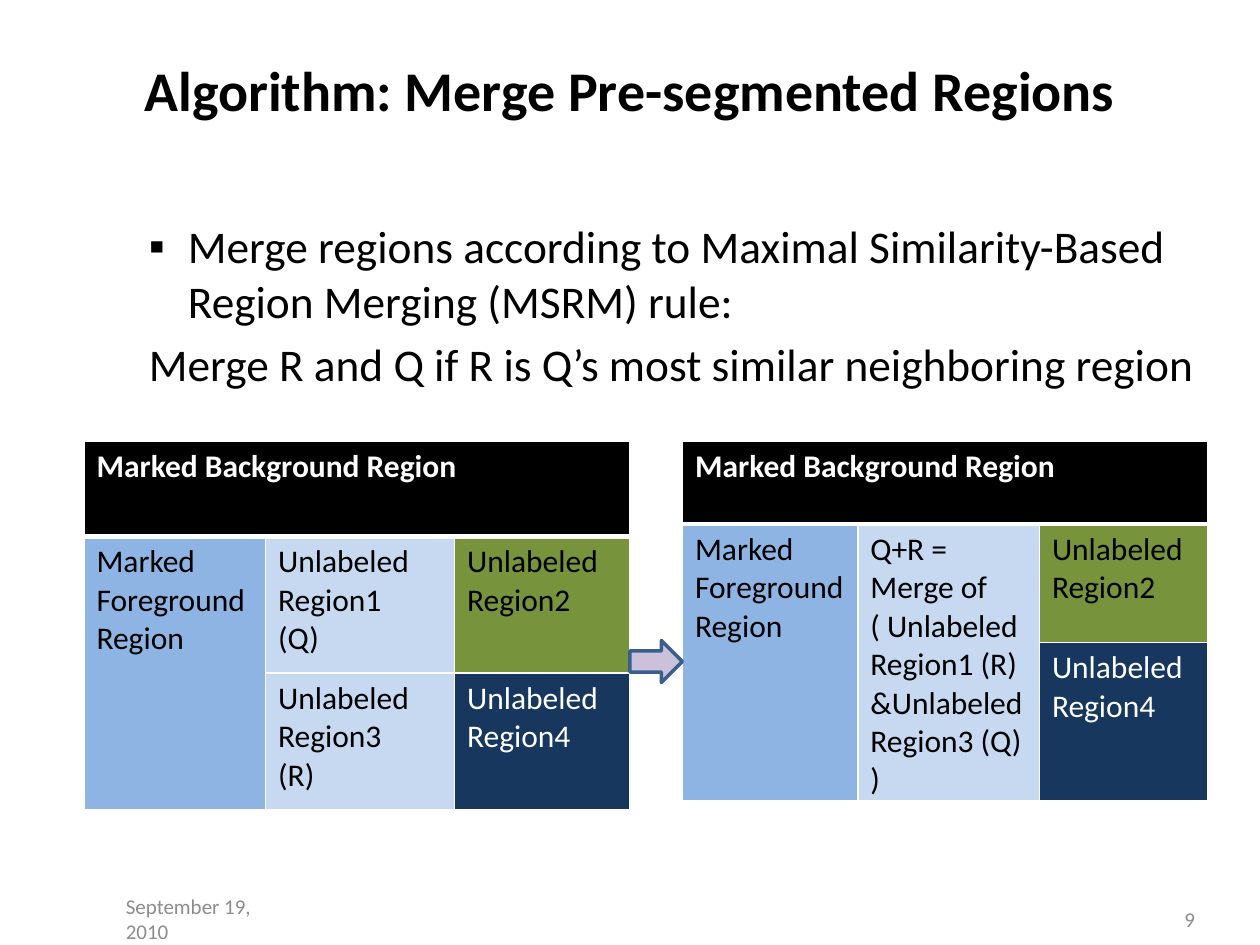
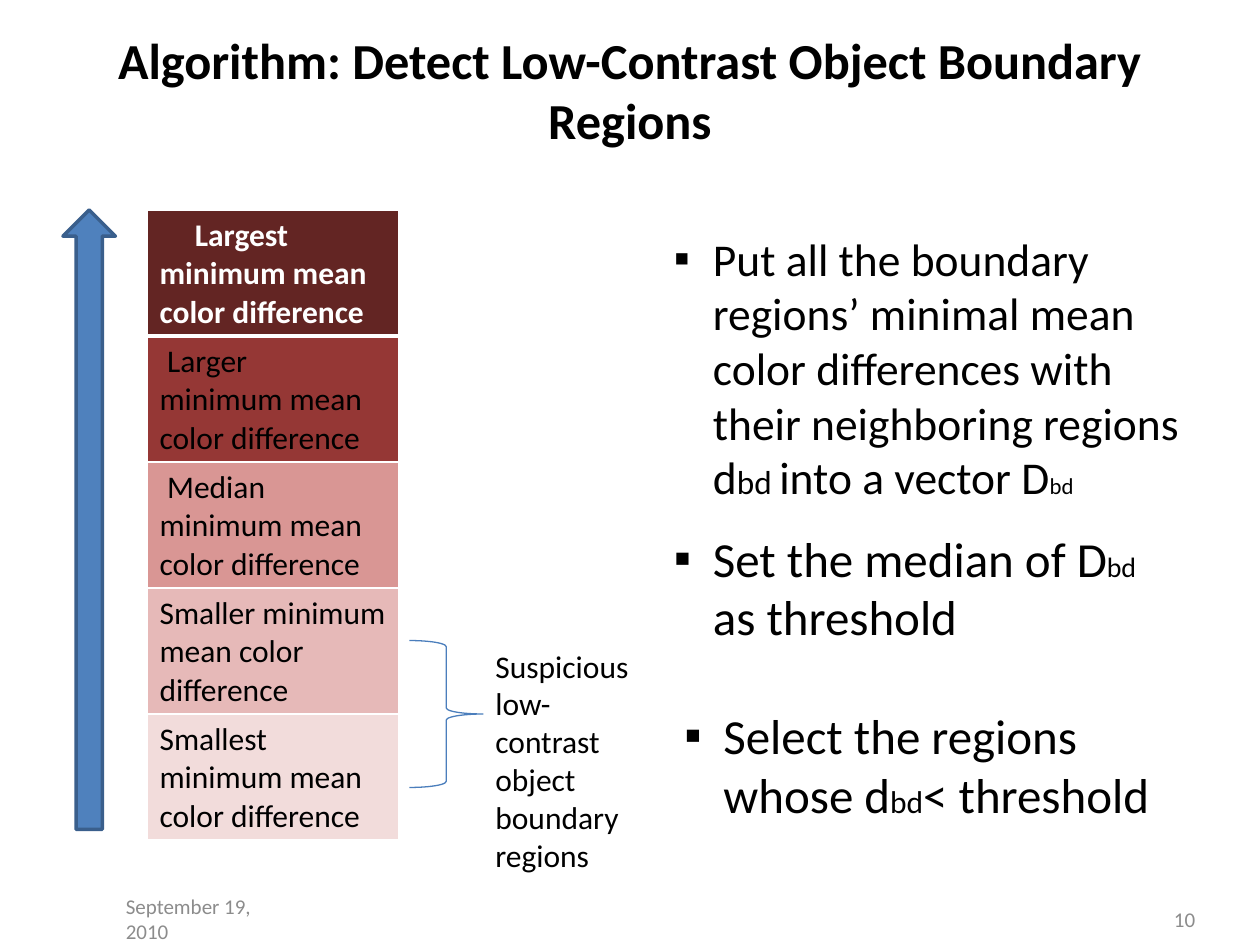
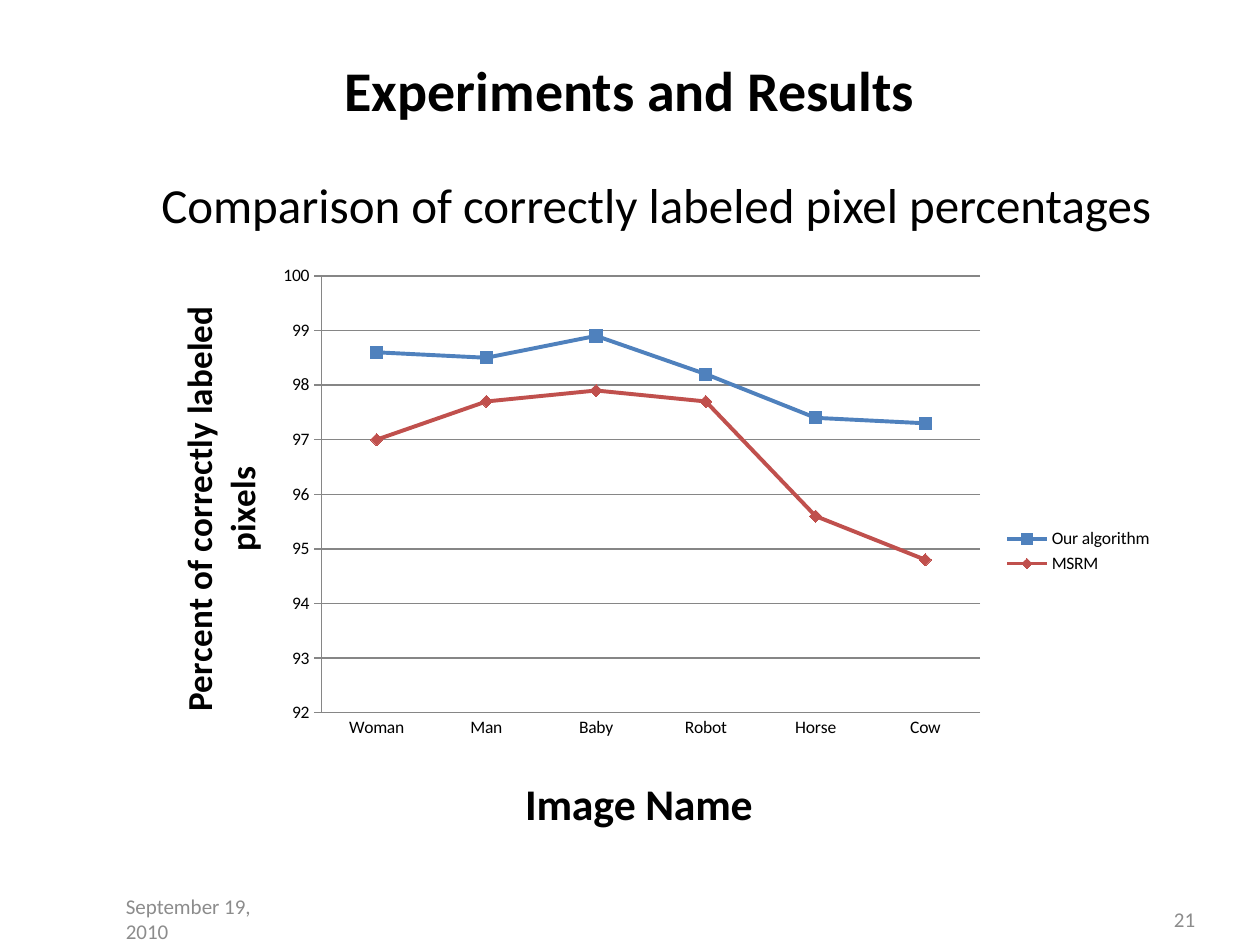
"""Three slides on region merging, laid out on a grid of 120 columns by 90 rows."""
from typing import NamedTuple, Optional

from lxml.etree import SubElement
from pptx import Presentation
from pptx.chart.data import CategoryChartData
from pptx.dml.color import RGBColor
from pptx.enum.chart import XL_CHART_TYPE as CHART, XL_LEGEND_POSITION as LEGEND
from pptx.enum.chart import XL_MARKER_STYLE as MARKER, XL_TICK_MARK as TICK
from pptx.enum.shapes import MSO_SHAPE as SHAPE
from pptx.enum.text import MSO_ANCHOR as ANCHOR, PP_ALIGN as ALIGN
from pptx.oxml.ns import qn
from pptx.util import Inches, Pt

FONT = "Calibri"
UNIT = Inches(10) / 120
COLORS = {
    "black": "000000", "white": "FFFFFF", "footer": "8C8C8C", "grid": "868686",
    "foreground": "8EB4E3", "unlabeled": "C6D9F1", "green": "77933C", "navy": "17375E",
    "lilac": "CCC1DA", "blue": "4F81BD", "red": "C0504D", "outline": "3A5F8C", "brace": "4B7EBC",
    "largest": "632523", "larger": "953735", "median": "D99694",
    "smaller": "E6B9B8", "smallest": "F2DCDB",
}
BULLET_INDENT = {"left": 0.81, "first": -0.31}


class Box(NamedTuple):
    """Place on the slide, in grid columns and rows."""
    x: float
    y: float
    w: float
    h: float

    def emu(self) -> list[int]:
        """Lengths for python-pptx."""
        return [cells(v) for v in self]


class Cell(NamedTuple):
    """Table cell with its look and span."""
    lines: str
    fill: str
    color: str = "black"
    rows: int = 1
    cols: int = 1
    first: float = 0


class Series(NamedTuple):
    """One line of the chart."""
    name: str
    values: tuple
    color: str
    marker: MARKER
    marker_size: int


HEADER = Cell("Marked Background Region", "black", "white", cols=3)
FOREGROUND = Cell("Marked Foreground\nRegion", "foreground", rows=2)
REGION_2 = Cell("Unlabeled Region2", "green")
REGION_4 = Cell("Unlabeled Region4", "navy", "white")
BEFORE = [
    [HEADER, None, None],
    [FOREGROUND, Cell("Unlabeled Region1\n(Q)", "unlabeled"), REGION_2],
    [None, Cell("Unlabeled Region3\n(R)", "unlabeled"), REGION_4],
]
MERGED = Cell("Q+R = Merge of\n( Unlabeled Region1 (R)\n&Unlabeled Region3 (Q)\n)", "unlabeled", rows=2)
AFTER = [[HEADER, None, None], [FOREGROUND, MERGED, REGION_2], [None, None, REGION_4]]
SCALE = [
    [Cell("Largest minimum mean color difference", "largest", "white", first=0.28)],
    [Cell("Larger\nminimum mean color difference", "larger", first=0.06)],
    [Cell("Median\nminimum mean color difference", "median", first=0.06)],
    [Cell("Smaller minimum mean color difference", "smaller")],
    [Cell("Smallest minimum mean color difference", "smallest")],
]
STEPS = [
    (Box(57, 21.4, 58, 25), [
        ("Put all the boundary regions’ minimal mean color differences with their neighboring regions d", 26),
        ("bd ", 19), ("into a vector D", 26), ("bd", 13)]),
    (Box(57, 49.7, 55, 15), [("Set the median of D", 28), ("bd", 16), (" as threshold", 28)]),
    (Box(58, 66.6, 53, 16), [("Select the regions whose d", 28), ("bd", 18), ("< threshold", 28)]),
]
IMAGES = ["Woman", "Man", "Baby", "Robot", "Horse", "Cow"]
RESULTS = [
    Series("Our algorithm", (98.6, 98.5, 98.9, 98.2, 97.4, 97.3), "blue", MARKER.SQUARE, 7),
    Series("MSRM", (97.0, 97.7, 97.9, 97.7, 95.6, 94.8), "red", MARKER.DIAMOND, 7),
]


def cells(n: float) -> int:
    """Length of n grid cells."""
    return round(n * UNIT)


def rgb(name: str) -> RGBColor:
    """Named colour."""
    return RGBColor.from_string(COLORS[name])


def set_font(font, size: float, color: str = "black", bold: bool = False) -> None:
    """Format a font."""
    font.name, font.size, font.bold = FONT, Pt(size), bold
    font.color.rgb = rgb(color)


def write(tf, text, size: float = 18, color: str = "black", bold: bool = False, align=ALIGN.LEFT,
          left: float = 0, first: float = 0, bullet: str = "", before: float = 0) -> None:
    """Add a paragraph made of a string or of (string, size) runs."""
    p = tf.add_paragraph() if tf.paragraphs[0].runs else tf.paragraphs[0]
    p.alignment, p.space_before = align, Pt(before)
    pPr = p._p.get_or_add_pPr()
    pPr.set("marL", str(Inches(left)))
    pPr.set("indent", str(Inches(first)))
    if bullet:
        SubElement(pPr, qn("a:buFont")).set("typeface", "Wingdings" if bullet == "§" else "Arial")
        SubElement(pPr, qn("a:buChar")).set("char", bullet)
    for part, part_size in [(text, size)] if isinstance(text, str) else text:
        r = p.add_run()
        r.text = part
        set_font(r.font, part_size, color, bold)


def add_text(slide, box: Box, text="", anchor=ANCHOR.TOP, **fmt):
    """Add a wrapping text box and return its frame."""
    tf = slide.shapes.add_textbox(*box.emu()).text_frame
    tf.word_wrap, tf.vertical_anchor = True, anchor
    if text:
        write(tf, text, **fmt)
    return tf


def add_shape(slide, kind: SHAPE, box: Box, line: str, width: float, fill: Optional[str] = None) -> None:
    """Add an outlined preset shape."""
    sp = slide.shapes.add_shape(kind, *box.emu())
    sp.shadow.inherit = False
    sp.line.color.rgb, sp.line.width = rgb(line), Pt(width)
    if fill:
        sp.fill.solid()
        sp.fill.fore_color.rgb = rgb(fill)
    else:
        sp.fill.background()


def set_borders(cell, row: int) -> None:
    """Draw white borders, thick below the header row."""
    tcPr = cell._tc.get_or_add_tcPr()
    thick = {0: "lnB", 1: "lnT"}.get(row)
    for side in ("lnL", "lnR", "lnT", "lnB"):
        ln = SubElement(tcPr, qn(f"a:{side}"), w=str(Pt(3 if side == thick else 1)))
        SubElement(SubElement(ln, qn("a:solidFill")), qn("a:srgbClr"), val=COLORS["white"])


def add_table(slide, x: float, y: float, widths: list, heights: list, grid: list) -> None:
    """Add a table; None marks a cell covered by a span."""
    box = Box(x, y, sum(widths), sum(heights))
    table = slide.shapes.add_table(len(heights), len(widths), *box.emu()).table
    table.horz_banding = False
    for col, width in zip(table.columns, widths):
        col.width = cells(width)
    for i, (row, height) in enumerate(zip(grid, heights)):
        table.rows[i].height = cells(height)
        for j, item in enumerate(row):
            cell = table.cell(i, j)
            set_borders(cell, i)
            if item is None:
                continue
            if item.rows > 1 or item.cols > 1:
                cell.merge(table.cell(i + item.rows - 1, j + item.cols - 1))
            cell.fill.solid()
            cell.fill.fore_color.rgb = rgb(item.fill)
            for k, line in enumerate(item.lines.split("\n")):
                write(cell.text_frame, line, color=item.color, bold=i == 0, first=0 if k else item.first)


def set_layout(parent, **shares: float) -> None:
    """Place a chart part by shares of the chart's size."""
    layout = parent.find(qn("c:layout"))
    if layout is None:
        layout = parent.makeelement(qn("c:layout"))
        parent.insert(0, layout)
    manual = SubElement(layout, qn("c:manualLayout"))
    if "w" in shares:
        SubElement(manual, qn("c:layoutTarget"), val="inner")
    for key in ("x", "y"):
        SubElement(manual, qn(f"c:{key}Mode"), val="edge")
    for key, share in shares.items():
        SubElement(manual, qn(f"c:{key}"), val=str(share))


def add_line_chart(slide, box: Box) -> None:
    """Add the chart of correctly labeled pixels."""
    data = CategoryChartData()
    data.categories = IMAGES
    for s in RESULTS:
        data.add_series(s.name, s.values)
    chart = slide.shapes.add_chart(CHART.LINE_MARKERS, *box.emu(), data).chart
    set_font(chart.font, 10)
    chart.has_title, chart.has_legend = False, True
    chart.legend.position, chart.legend.include_in_layout = LEGEND.RIGHT, False
    plot = chart.plots[0]
    plot.vary_by_categories = False
    for line, s in zip(plot.series, RESULTS):
        line.smooth = False
        line.format.line.color.rgb, line.format.line.width = rgb(s.color), Pt(2.25)
        line.marker.style, line.marker.size = s.marker, s.marker_size
        line.marker.format.fill.solid()
        line.marker.format.fill.fore_color.rgb = rgb(s.color)
        line.marker.format.line.color.rgb = rgb(s.color)
    cat, val = chart.category_axis, chart.value_axis
    for axis, title, size, tick in ((cat, "Image Name", 25, TICK.NONE),
                                    (val, "Percent of correctly labeled pixels", 20, TICK.CROSS)):
        write(axis.axis_title.text_frame, title, size=size, bold=True, align=ALIGN.CENTER)
        axis.major_tick_mark, axis.minor_tick_mark = tick, TICK.NONE
        axis.format.line.color.rgb = rgb("grid")
    val.minimum_scale, val.maximum_scale, val.major_unit = 92, 100, 1
    val.tick_labels.number_format, val.tick_labels.number_format_is_linked = "0", False
    val.has_major_gridlines = True
    val.major_gridlines.format.line.color.rgb = rgb("grid")
    set_layout(next(chart.element.iter(qn("c:plotArea"))), x=0.18, y=0.04, w=0.64, h=0.73)
    set_layout(cat.axis_title.element, x=0.37, y=0.86)
    set_layout(val.axis_title.element, x=0.03, y=0.08)


def add_slide(prs, title: str, number: int, size: float = 32):
    """Add a slide with its title, date and number."""
    slide = prs.slides.add_slide(prs.slide_layouts[6])
    footer = {"anchor": ANCHOR.MIDDLE, "size": 12, "color": "footer"}
    add_text(slide, Box(10.8, 86, 15, 3), "September 19, 2010", **footer)
    add_text(slide, Box(105, 86, 10, 3), str(number), align=ALIGN.RIGHT, **footer)
    add_text(slide, Box(5, 4, 110, 9), title, anchor=ANCHOR.MIDDLE, size=size, bold=True, align=ALIGN.CENTER)
    return slide


def merge_slide(prs) -> None:
    """Merging rule with regions before and after."""
    slide = add_slide(prs, "Algorithm: Merge Pre-segmented Regions", 9)
    rule = "Merge regions according to Maximal Similarity-Based Region Merging (MSRM) rule:"
    tf = add_text(slide, Box(7, 20.2, 110, 18.8), rule, size=25.9, bullet="▪", **BULLET_INDENT)
    write(tf, "Merge R and Q if R is Q’s most similar neighboring region", size=25.9, before=5.2, **BULLET_INDENT)
    add_table(slide, 8, 42, [17.3, 18, 16.7], [9.1, 13, 13], BEFORE)
    add_table(slide, 65, 42, [16.7, 17.3, 16], [7.9, 11.3, 12.8], AFTER)
    add_shape(slide, SHAPE.RIGHT_ARROW, Box(60, 61, 5, 4), "outline", 2, "lilac")


def contrast_slide(prs) -> None:
    """Scale of color differences and the threshold steps."""
    slide = add_slide(prs, "Algorithm: Detect Low-Contrast Object Boundary Regions", 10, 28.8)
    add_table(slide, 14, 20, [24], [12] * len(SCALE), SCALE)
    add_shape(slide, SHAPE.UP_ARROW, Box(6, 20, 5, 59), "outline", 2, "blue")
    add_shape(slide, SHAPE.RIGHT_BRACE, Box(39, 61, 7, 14), "brace", 0.75)
    add_text(slide, Box(46, 61, 17, 23), "Suspicious low-contrast object boundary regions")
    for box, runs in STEPS:
        add_text(slide, box, runs, bullet="▪", **BULLET_INDENT)


def results_slide(prs) -> None:
    """Comparison chart."""
    slide = add_slide(prs, "Experiments and Results", 21)
    add_text(slide, Box(12, 16, 101, 6.8), "Comparison of correctly labeled pixel percentages",
             size=28, align=ALIGN.CENTER)
    add_line_chart(slide, Box(13, 24, 98, 57))


def main() -> None:
    """Build and save the slides."""
    prs = Presentation()
    prs.slide_width, prs.slide_height = cells(120), cells(90)
    for build in (merge_slide, contrast_slide, results_slide):
        build(prs)
    prs.save("out.pptx")


if __name__ == "__main__":
    main()
